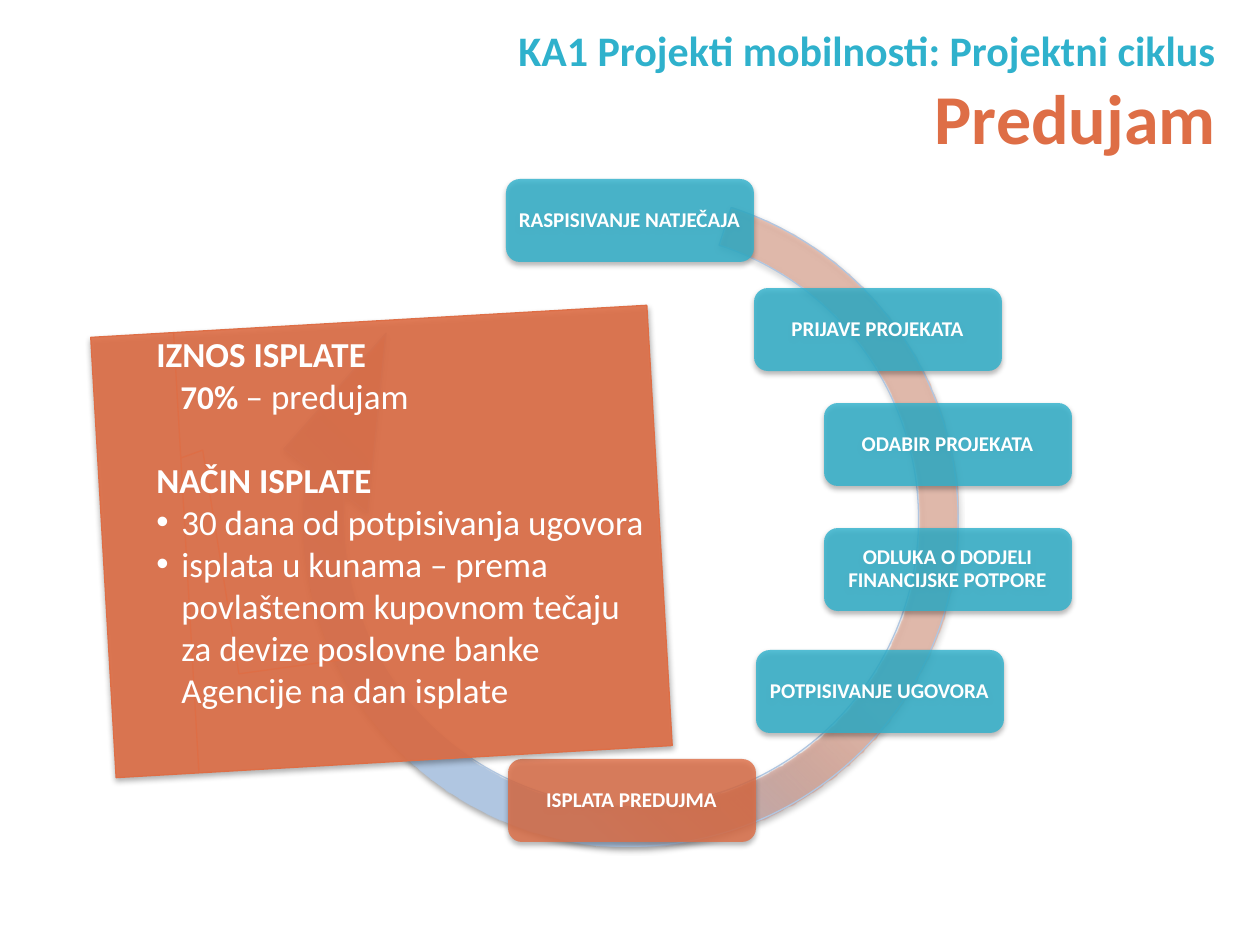
from dataclasses import dataclass

from lxml.etree import SubElement
from pptx import Presentation
from pptx.dml.color import RGBColor
from pptx.enum.shapes import MSO_SHAPE as Preset
from pptx.enum.text import MSO_ANCHOR as Anchor, PP_ALIGN as Align
from pptx.oxml import parse_xml
from pptx.oxml.ns import nsdecls, qn
from pptx.util import Emu, Pt

EMU_PER_PX = 914400 / 126
TEAL, ORANGE, BLUE, WHITE = "2FB1CC", "DE6E46", "B0C6E1", "FFFFFF"
FONT = "Calibri"


@dataclass(frozen=True)
class Box:
    left: int
    top: int
    width: int
    height: int

    def emu(self) -> list[Emu]:
        return [px(v) for v in (self.left, self.top, self.width, self.height)]


@dataclass(frozen=True)
class Stage:
    label: str
    left: int
    top: int
    color: str = TEAL


@dataclass(frozen=True)
class Run:
    text: str
    size: int
    bold: bool = True
    color: str = WHITE


@dataclass(frozen=True)
class Line:
    runs: tuple[Run, ...]
    margin: int = 0
    indent: int = 0
    bullet: str = ""
    before: int = 0
    level: int = 0


def px(value: int) -> Emu:
    return Emu(round(value * EMU_PER_PX))


def rgb(color: str) -> RGBColor:
    return RGBColor.from_string(color)


def set_format(target, values: dict) -> None:
    for name, value in values.items():
        setattr(target, name, value)


def add_shadow(shape) -> None:
    shape.shadow.inherit = False
    effects = shape._element.spPr.find(qn("a:effectLst"))
    outer = SubElement(effects, qn("a:outerShdw"), blurRad="40000",
                       dist="23000", dir="5400000", rotWithShape="0")
    black = SubElement(outer, qn("a:srgbClr"), val="000000")
    SubElement(black, qn("a:alpha"), val="35000")


def set_fill(shape, color: str, opacity: int) -> None:
    shape.fill.solid()
    shape.fill.fore_color.rgb = rgb(color)
    node = shape._element.spPr.find(qn("a:solidFill")).find(qn("a:srgbClr"))
    SubElement(node, qn("a:alpha"), val=str(opacity * 1000))


def set_line(shape, color: str) -> None:
    shape.line.color.rgb = rgb(color)
    shape.line.width = Pt(0.75)


def add_preset(slide, preset, box: Box, rotation: float, adjustments: list[float]):
    shape = slide.shapes.add_shape(preset, *box.emu())
    shape.rotation = rotation
    for index, value in enumerate(adjustments):
        shape.adjustments[index] = value
    add_shadow(shape)
    return shape


def add_run(paragraph, run: Run) -> None:
    part = paragraph.add_run()
    part.text = run.text
    set_format(part.font, {"name": FONT, "size": Pt(run.size), "bold": run.bold})
    part.font.color.rgb = rgb(run.color)


def add_text(slide, box: Box, lines: list[Line], align=Align.LEFT, anchor=Anchor.TOP) -> None:
    frame = slide.shapes.add_textbox(*box.emu()).text_frame
    set_format(frame, {"word_wrap": True, "vertical_anchor": anchor})
    for index, line in enumerate(lines):
        paragraph = frame.add_paragraph() if index else frame.paragraphs[0]
        properties = paragraph._p.get_or_add_pPr()
        properties.set("marL", str(px(line.margin)))
        properties.set("indent", str(px(line.indent)))
        if line.bullet:
            SubElement(properties, qn("a:buFont"), typeface="Arial")
            SubElement(properties, qn("a:buChar"), char=line.bullet)
        set_format(paragraph, {"alignment": align, "level": line.level})
        if line.before:
            paragraph.space_before = Pt(line.before)
        for run in line.runs:
            add_run(paragraph, run)


def add_cycle_arrow(slide) -> None:
    arrow = add_preset(slide, Preset.CIRCULAR_ARROW, Box(271, 159, 720, 720), 307.9,
                       [0.055, 18.026, 143.539, 203.969, 0.073])
    set_line(arrow, BLUE)
    stops = [(47, ORANGE, 34), (67, BLUE, 100), (83, BLUE, 100), (100, "CAD9EB", 100)]
    stop_xml = "".join(
        f'<a:gs pos="{at * 1000}"><a:srgbClr val="{color}">'
        f'<a:alpha val="{opacity * 1000}"/></a:srgbClr></a:gs>'
        for at, color, opacity in stops)
    gradient = parse_xml(
        f'<a:gradFill {nsdecls("a")} rotWithShape="1"><a:gsLst>{stop_xml}</a:gsLst>'
        '<a:path path="circle"><a:fillToRect l="100000" b="100000"/></a:path></a:gradFill>')
    arrow.fill.background()
    properties = arrow._element.spPr
    properties.replace(properties.find(qn("a:noFill")), gradient)


def add_stage(slide, stage: Stage) -> None:
    card = add_preset(slide, Preset.ROUNDED_RECTANGLE,
                      Box(stage.left, stage.top, 248, 83), 0, [0.167])
    set_fill(card, stage.color, 81)
    card.line.fill.background()
    set_format(card.text_frame, {
        "word_wrap": True, "vertical_anchor": Anchor.MIDDLE,
        "margin_left": px(5), "margin_right": px(6),
        "margin_top": px(6), "margin_bottom": px(6)})
    paragraph = card.text_frame.paragraphs[0]
    set_format(paragraph, {"alignment": Align.CENTER, "line_spacing": 0.9})
    add_run(paragraph, Run(stage.label, 12))


STAGES = [
    Stage("RASPISIVANJE NATJEČAJA", 506, 179),
    Stage("PRIJAVE PROJEKATA", 754, 288),
    Stage("ODABIR PROJEKATA", 824, 403),
    Stage("ODLUKA O DODJELI FINANCIJSKE POTPORE", 824, 528),
    Stage("POTPISIVANJE UGOVORA", 756, 650),
    Stage("ISPLATA PREDUJMA", 508, 759, ORANGE),
]
TITLE = [
    Line((Run("KA1 Projekti mobilnosti: Projektni ciklus", 24, color=TEAL),)),
    Line((Run("Predujam", 40, color=ORANGE),)),
]
PAYMENT = [
    Line((Run("IZNOS ISPLATE", 20),)),
    Line((Run("70% ", 19), Run("– predujam", 20, False)), 60, -36, level=1),
    Line((Run("NAČIN ISPLATE", 20),), before=24),
    Line((Run("30 dana od potpisivanja ugovora", 20, False),), 25, -25, "•"),
    Line((Run("isplata u kunama – prema povlaštenom kupovnom tečaju za devize "
              "poslovne banke Agencije na dan isplate", 20, False),), 25, -25, "•"),
]


def main() -> None:
    deck = Presentation()
    set_format(deck, {"slide_width": px(1260), "slide_height": px(945)})
    slide = deck.slides.add_slide(deck.slide_layouts[6])

    # Project cycle
    add_cycle_arrow(slide)
    for stage in STAGES:
        add_stage(slide, stage)

    # Title
    add_text(slide, Box(313, 16, 915, 149), TITLE, Align.RIGHT, Anchor.BOTTOM)

    # Payment callout
    callout = add_preset(slide, Preset.LINE_CALLOUT_3_BORDER_AND_ACCENT_BAR,
                         Box(103, 321, 557, 441), 356.7,
                         [0.285, 0.149, 0.27, 0.189, 0.781, 0.231, 0.753, 0.512])
    set_fill(callout, ORANGE, 90)
    set_line(callout, ORANGE)
    add_text(slide, Box(144, 326, 515, 479), PAYMENT)

    deck.save("out.pptx")


if __name__ == "__main__":
    main()
